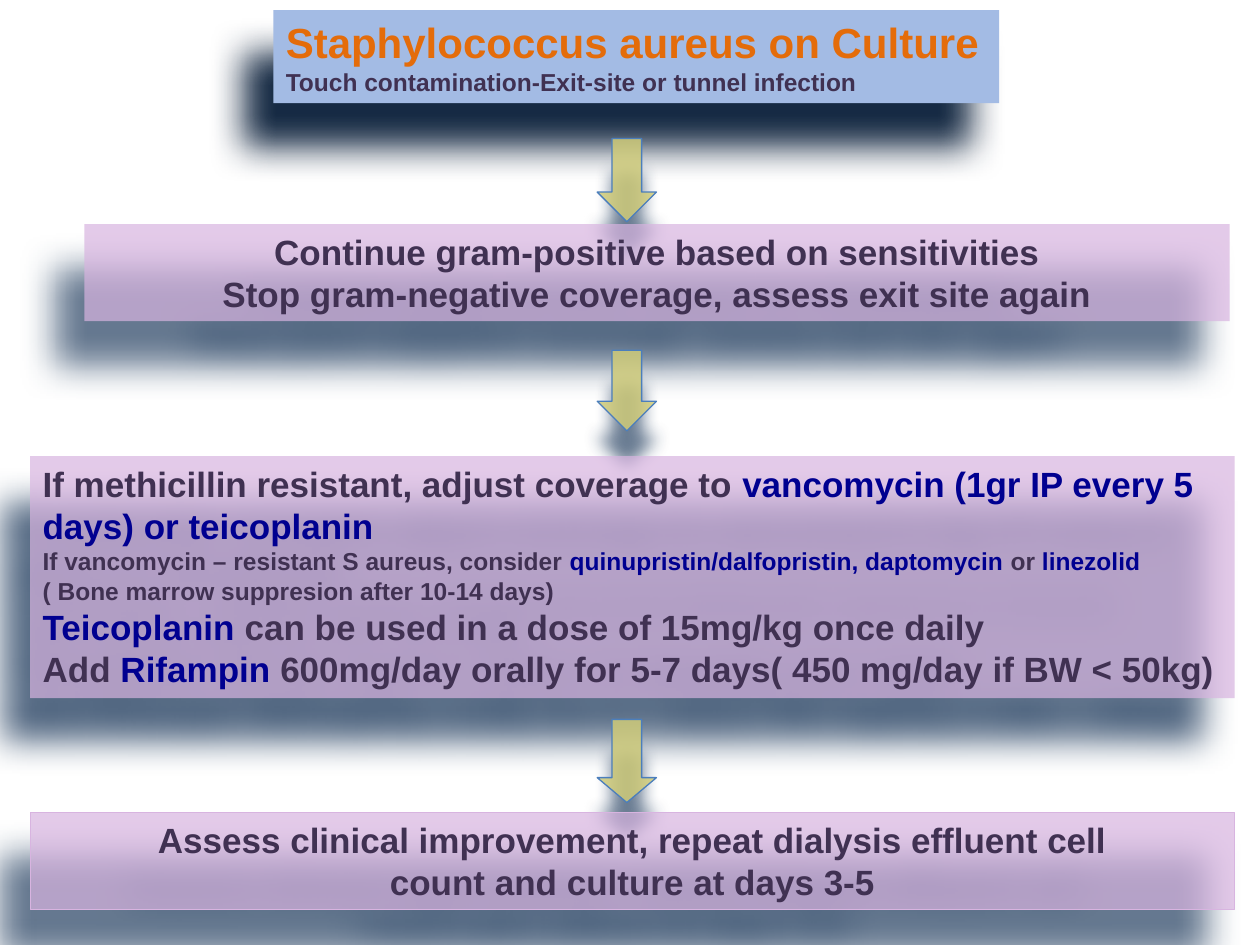
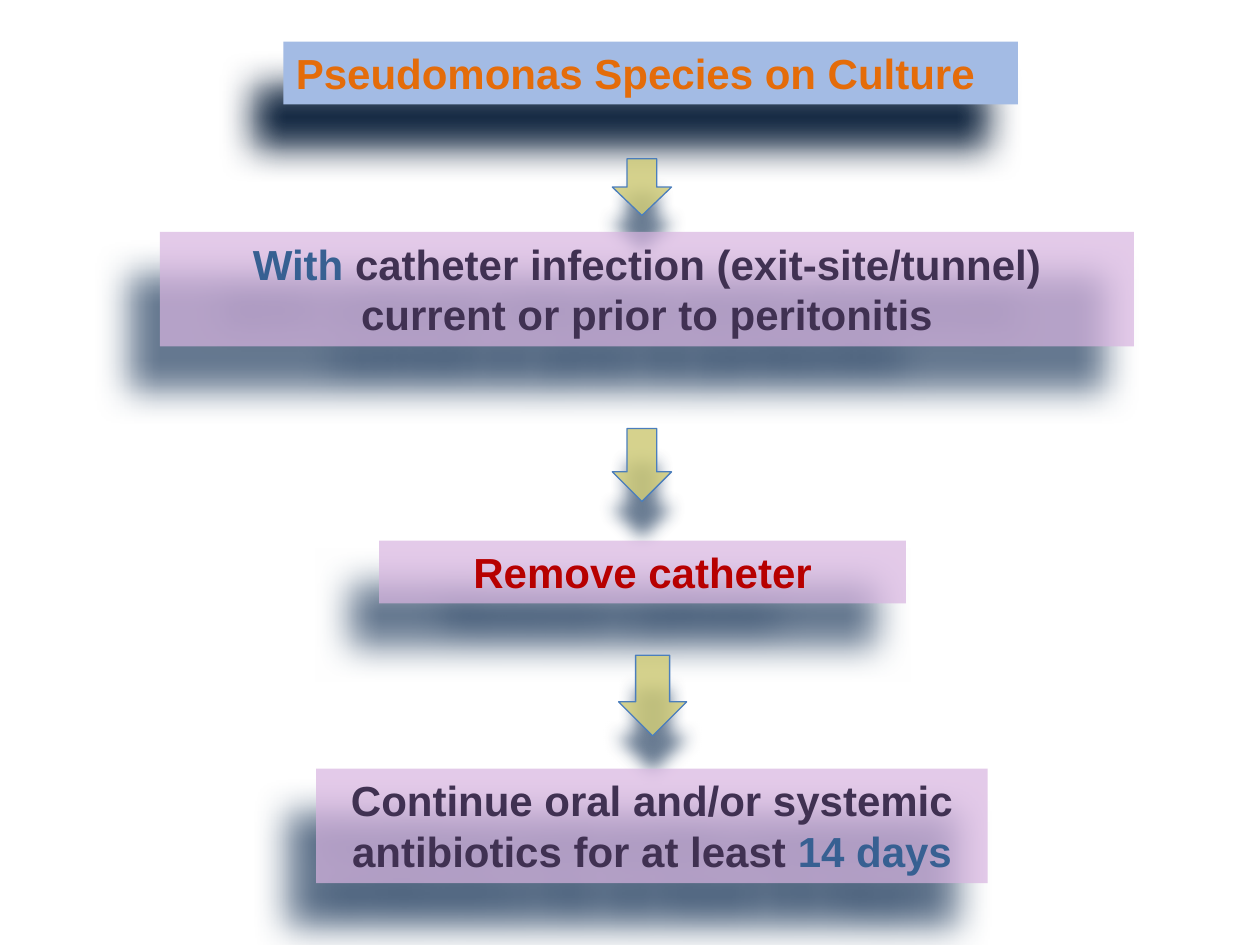
from typing import NamedTuple, Optional

from lxml import etree
from pptx import Presentation
from pptx import util as u
from pptx.dml.color import RGBColor
from pptx.enum import shapes, text
from pptx.oxml import ns

# Positions and sizes are counted in cells of a 100 x 75 grid over the slide.
COLUMNS, ROWS = 100, 75
CELL = u.Inches(0.1)

FONT = "Arial"
TITLE_BLUE, ORANGE = "A3BBE4", "E46C0A"
LILAC, PLUM = "D8B4E0", "403152"
NAVY, STEEL, RED = "000090", "376092", "B70000"
SAND, ARROW_EDGE = "CFCB7A", "4B7EBC"


class Shadow(NamedTuple):
    color: str
    opacity: int
    blur: float
    distance: float
    angle: int


class Run(NamedTuple):
    words: str
    color: str = PLUM
    size: int = 20


class Step(NamedTuple):
    """A box of the flow chart; each entry of lines is one paragraph of runs."""
    left: float
    top: float
    width: float
    height: float
    lines: list[list[Run]]
    centered: bool = True
    fill: str = LILAC
    opacity: int = 70
    edge: Optional[str] = None
    shadow: Shadow = Shadow("254061", 100, 20, 30, 125)


class Arrow(NamedTuple):
    left: float
    top: float
    height: float
    width: float = 4.7
    head: float = 0.5


TITLE_SHADOW = Shadow("0F243E", 96, 20, 30, 125)
ARROW_SHADOW = Shadow("254061", 80, 10, 20, 90)


def rgb(color: str) -> RGBColor:
    return RGBColor.from_string(color)


def cells(*counts: float) -> list[int]:
    return [round(count * CELL) for count in counts]


def add_opacity(color_element, percent: int) -> None:
    if percent < 100:
        etree.SubElement(color_element, ns.qn("a:alpha"), val=str(percent * 1000))


def paint(shape, fill: str, opacity: int, edge: Optional[str], shadow: Shadow) -> None:
    shape.fill.solid()
    shape.fill.fore_color.rgb = rgb(fill)
    properties = shape.element.spPr
    add_opacity(properties.find(ns.qn("a:solidFill"))[0], opacity)
    if edge:
        shape.line.color.rgb = rgb(edge)
        shape.line.width = u.Pt(0.75)
    else:
        shape.line.fill.background()

    if hasattr(shape, "shadow"):
        shape.shadow.inherit = False
    effects = properties.find(ns.qn("a:effectLst"))
    outer = etree.SubElement(
        effects, ns.qn("a:outerShdw"), blurRad=str(u.Pt(shadow.blur)),
        dist=str(u.Pt(shadow.distance)), dir=str(shadow.angle * 60000), rotWithShape="0")
    add_opacity(etree.SubElement(outer, ns.qn("a:srgbClr"), val=shadow.color), shadow.opacity)


def add_run(paragraph, words: str, *, color: str, size: int, bold: bool = True) -> None:
    run = paragraph.add_run()
    run.text = words
    run.font.name, run.font.size, run.font.bold = FONT, u.Pt(size), bold
    run.font.color.rgb = rgb(color)


def draw_step(slide, step: Step) -> None:
    box = slide.shapes.add_textbox(*cells(step.left, step.top, step.width, step.height))
    paint(box, step.fill, step.opacity, step.edge, step.shadow)
    frame = box.text_frame
    frame.word_wrap = True
    frame.auto_size = text.MSO_AUTO_SIZE.SHAPE_TO_FIT_TEXT
    for index, line in enumerate(step.lines):
        paragraph = frame.add_paragraph() if index else frame.paragraphs[0]
        paragraph.alignment = text.PP_ALIGN.CENTER if step.centered else text.PP_ALIGN.LEFT
        for run in line:
            add_run(paragraph, run.words, color=run.color, size=run.size)


def draw_arrow(slide, arrow: Arrow) -> None:
    shape = slide.shapes.add_shape(
        shapes.MSO_SHAPE.DOWN_ARROW, *cells(arrow.left, arrow.top, arrow.width, arrow.height))
    shape.adjustments[1] = arrow.head
    paint(shape, SAND, 85, ARROW_EDGE, ARROW_SHADOW)


def title(left: float, top: float, width: float, height: float,
          heading: str, subtitle: str = "") -> Step:
    lines = [[Run(heading, ORANGE, 24)]]
    if subtitle:
        lines.append([Run(subtitle, size=14)])
    return Step(left, top, width, height, lines, centered=False,
                fill=TITLE_BLUE, opacity=100, shadow=TITLE_SHADOW)


STAPHYLOCOCCUS = [
    title(21.7, 0.8, 57.6, 7.4, "Staphylococcus aureus on Culture",
          "Touch contamination-Exit-site or tunnel infection"),
    Arrow(47.4, 11, 6.6),
    Step(6.7, 17.8, 90.9, 7.7, [
        [Run("Continue gram-positive based on sensitivities")],
        [Run("Stop gram-negative coverage, assess exit site again")],
    ]),
    Arrow(47.4, 27.8, 6.4),
    Step(2.4, 36.2, 95.6, 19.2, [
        [Run("If methicillin resistant, adjust coverage to "),
         Run("vancomycin (1gr IP every 5 days) or teicoplanin", NAVY)],
        [Run("If vancomycin – resistant S aureus, consider ", size=14),
         Run("quinupristin/dalfopristin, daptomycin ", NAVY, 14),
         Run("or ", size=14),
         Run("linezolid ", NAVY, 14),
         Run("( Bone marrow suppresion after 10-14 days)", size=14)],
        [Run("Teicoplanin ", NAVY),
         Run("can be used in a dose of 15mg/kg once daily")],
        [Run("Add"),
         Run(" Rifampin ", NAVY),
         Run("600mg/day orally for 5-7 days( 450 mg/day if BW < 50kg)")],
    ], centered=False),
    Arrow(47.4, 57.1, 6.6, head=0.42),
    Step(2.4, 64.5, 95.6, 7.7, [
        [Run("Assess clinical improvement, repeat dialysis effluent cell")],
        [Run("count and culture at days 3-5")],
    ], edge=LILAC),
]

PSEUDOMONAS = [
    title(22.5, 3.3, 58.3, 5, "Pseudomonas Species on Culture"),
    Arrow(48.6, 12.6, 4.5),
    Step(12.7, 18.4, 77.3, 9.1, [
        [Run("With ", STEEL, 24), Run("catheter infection (exit-site/tunnel)", size=24)],
        [Run("current or prior to peritonitis", size=24)],
    ]),
    Arrow(48.6, 34, 5.8),
    Step(30.1, 42.9, 41.8, 5, [[Run("Remove catheter", RED, 24)]]),
    Arrow(49.1, 52, 6.4, width=5.4),
    Step(25.1, 61, 53.3, 9.1, [
        [Run("Continue oral and/or systemic antibiotics for at least ", size=24),
         Run("14 days", STEEL, 24)],
    ]),
]


def main() -> None:
    deck = Presentation()
    deck.slide_width, deck.slide_height = cells(COLUMNS, ROWS)
    for flow in (STAPHYLOCOCCUS, PSEUDOMONAS):
        slide = deck.slides.add_slide(deck.slide_layouts[6])
        for part in flow:
            if isinstance(part, Arrow):
                draw_arrow(slide, part)
            else:
                draw_step(slide, part)
    deck.save("out.pptx")


if __name__ == "__main__":
    main()
